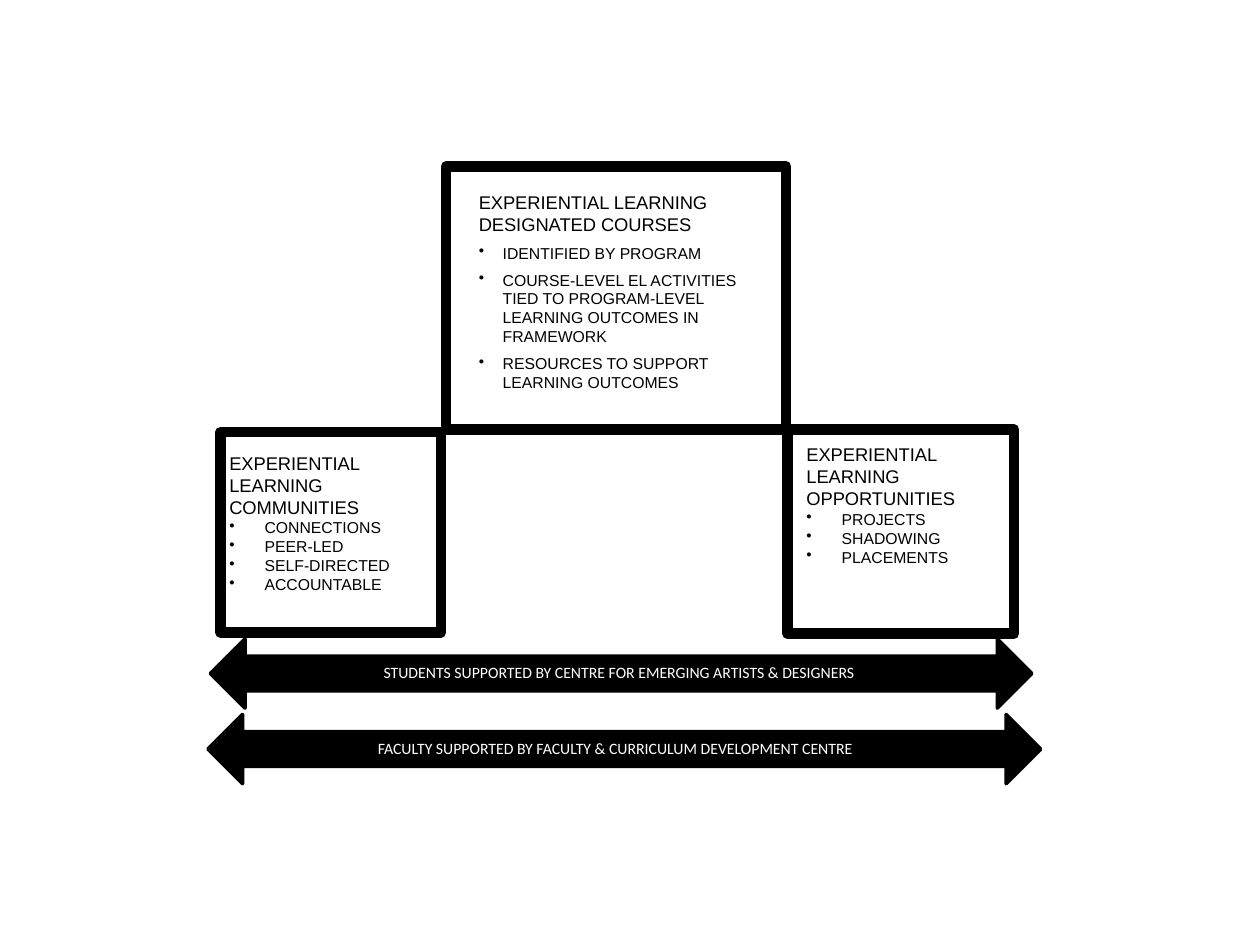
from dataclasses import dataclass

from lxml.etree import SubElement
from pptx import Presentation
from pptx.dml.color import RGBColor
from pptx.enum.shapes import MSO_SHAPE as Shape
from pptx.enum.text import MSO_ANCHOR as Anchor, PP_ALIGN as Align
from pptx.oxml.ns import qn
from pptx.util import Inches, Pt

BLACK = RGBColor(0, 0, 0)
WHITE = RGBColor(255, 255, 255)


@dataclass
class Diagram:
    page: object
    heading_size: float = 10.5
    body_size: float = 9
    border: float = 6

    def shape(self, kind, area, fill=None, line=None):
        box = self.page.shapes.add_shape(kind, *map(Inches, area))
        box.shadow.inherit = False
        if fill is None:
            box.fill.background()
        else:
            box.fill.solid()
            box.fill.fore_color.rgb = fill
        if line is None:
            box.line.fill.background()
        else:
            box.line.color.rgb = BLACK
            box.line.width = Pt(line)
        frame = box.text_frame
        frame.word_wrap = True
        frame.margin_left = frame.margin_right = Inches(0.07)
        frame.margin_top = frame.margin_bottom = Inches(0.04)
        return box

    def frame(self, area):
        return self.shape(Shape.RECTANGLE, area, line=self.border)

    def panel(self, area):
        return self.shape(Shape.RECTANGLE, area, fill=WHITE)

    def paragraph(self, frame, text, size, font="Arial", color=BLACK, align=Align.LEFT):
        para = frame.paragraphs[0] if not frame.text else frame.add_paragraph()
        para.text = text
        para.alignment = align
        para.font.size = Pt(size)
        para.font.name = font
        para.font.color.rgb = color
        return para

    def bullet(self, para, indent):
        props = para._p.get_or_add_pPr()
        props.set("marL", str(Inches(indent)))
        props.set("indent", str(-Inches(indent)))
        mark = SubElement(props, qn("a:buChar"))
        mark.set("char", "•")
        props.insert(0, mark)
        if para.space_before is not None:
            props.insert(0, props.find(qn("a:spcBef")))

    def topic(self, box, headings, items, indent=0.28, gap=0, anchor=Anchor.TOP):
        frame = box.text_frame
        frame.vertical_anchor = anchor
        for heading in headings:
            self.paragraph(frame, heading, self.heading_size)
        for item in items:
            para = self.paragraph(frame, item, self.body_size)
            para.space_before = Pt(gap)
            self.bullet(para, indent)

    def support(self, arrow_area, label_area, text):
        self.shape(Shape.LEFT_RIGHT_ARROW, arrow_area, fill=BLACK, line=2)
        label = self.shape(Shape.RECTANGLE, label_area, line=0.5)
        label.text_frame.vertical_anchor = Anchor.MIDDLE
        self.paragraph(label.text_frame, text, self.body_size, "Calibri", WHITE, Align.CENTER)


def main():
    deck = Presentation()
    deck.slide_width, deck.slide_height = Inches(10), Inches(7.5)
    diagram = Diagram(deck.slides.add_slide(deck.slide_layouts[6]))

    diagram.frame((3.54, 1.32, 2.7, 2.09))
    diagram.topic(
        diagram.panel((3.73, 1.48, 2.33, 1.83)),
        ["EXPERIENTIAL LEARNING DESIGNATED COURSES"],
        [
            "IDENTIFIED BY PROGRAM",
            "COURSE-LEVEL EL ACTIVITIES TIED TO PROGRAM-LEVEL LEARNING OUTCOMES IN FRAMEWORK",
            "RESOURCES TO SUPPORT LEARNING OUTCOMES",
        ],
        indent=0.19,
        gap=4.5,
    )

    diagram.frame((6.25, 3.41, 1.8, 1.62))
    diagram.topic(
        diagram.panel((6.33, 3.48, 1.65, 1.33)),
        ["EXPERIENTIAL LEARNING", "OPPORTUNITIES"],
        ["PROJECTS", "SHADOWING", "PLACEMENTS"],
    )

    diagram.support(
        (1.67, 5.07, 6.52, 0.55),
        (1.92, 5.21, 5.98, 0.25),
        "STUDENTS SUPPORTED BY CENTRE FOR EMERGING ARTISTS & DESIGNERS",
    )
    diagram.support(
        (1.65, 5.67, 6.61, 0.55),
        (1.89, 5.81, 5.98, 0.25),
        "FACULTY SUPPORTED BY FACULTY & CURRICULUM DEVELOPMENT CENTRE",
    )

    communities = diagram.frame((1.75, 3.43, 1.75, 1.59))
    communities.text_frame.margin_bottom = Inches(0.19)
    diagram.topic(
        communities,
        ["EXPERIENTIAL LEARNING COMMUNITIES"],
        ["CONNECTIONS", "PEER-LED", "SELF-DIRECTED", "ACCOUNTABLE"],
        anchor=Anchor.MIDDLE,
    )

    deck.save("out.pptx")


if __name__ == "__main__":
    main()
